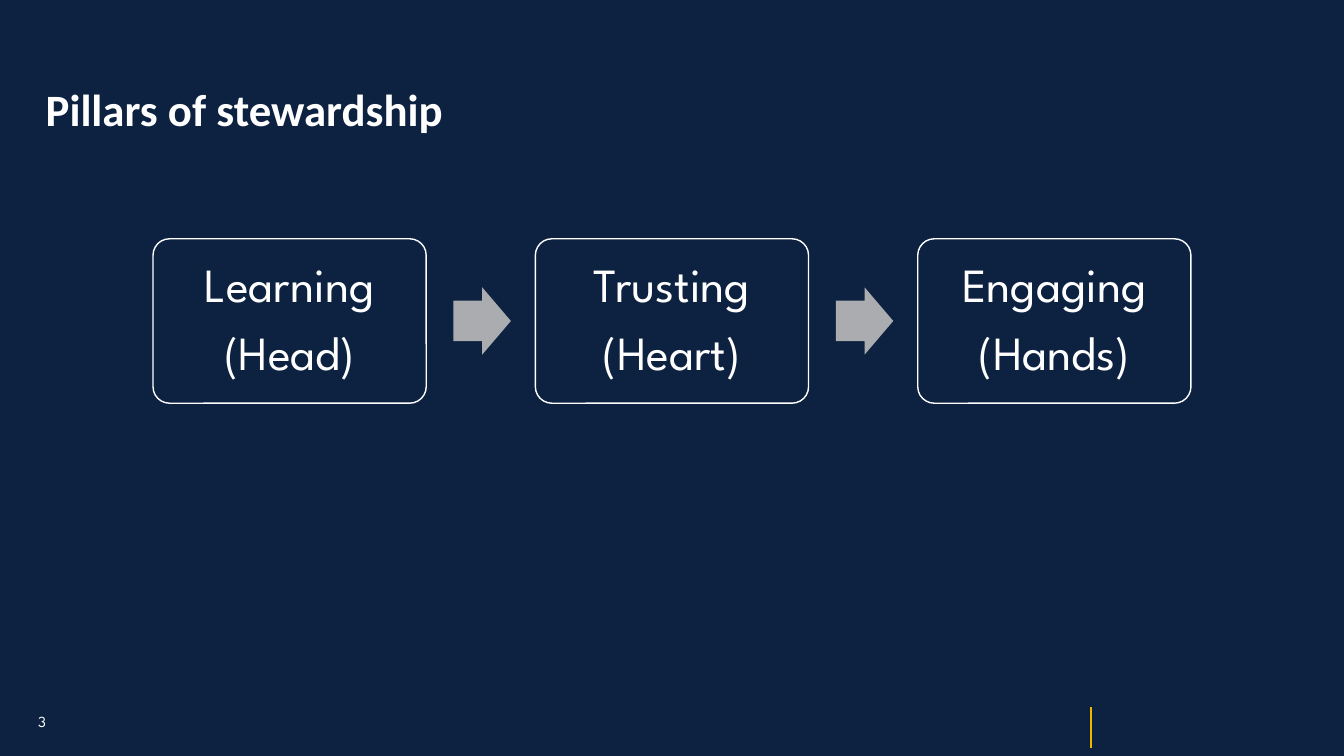
from dataclasses import dataclass

from lxml import etree
from pptx import Presentation
from pptx import util as u
from pptx.dml.color import RGBColor
from pptx.enum import shapes, text
from pptx.oxml.ns import qn

WIDTH, HEIGHT = u.Inches(13.33), u.Inches(7.5)
COLUMNS, ROWS = 40, 24
NAVY, CARD_NAVY, WHITE, GREY, GOLD = "0D2240", "0D2140", "FFFFFF", "ABACB0", "EBB800"
BRAND_FONT, TITLE_FONT = "League Spartan", "Calibri"
PILLAR_PITCH, PILLAR_MIDDLE = 11.38, 10.19
CARD_WIDTH, CARD_HEIGHT = 8.13, 5.22
ARROW_WIDTH, ARROW_HEIGHT, ARROW_OFFSET = 1.71, 2.14, 5.73


@dataclass(frozen=True)
class Area:
    """A rectangle in grid columns and rows."""

    column: float
    row: float
    columns: float
    rows: float

    def lengths(self) -> tuple:
        """Return left, top, width and height on the slide."""
        return x(self.column), y(self.row), x(self.columns), y(self.rows)


@dataclass(frozen=True)
class Pillar:
    """A pillar of stewardship and the body part it stands for."""

    action: str
    body_part: str


PILLARS = [
    Pillar("Learning", "(Head)"),
    Pillar("Trusting", "(Heart)"),
    Pillar("Engaging", "(Hands)"),
]


def x(columns: float) -> int:
    """Convert grid columns to a length."""
    return round(WIDTH * columns / COLUMNS)


def y(rows: float) -> int:
    """Convert grid rows to a length."""
    return round(HEIGHT * rows / ROWS)


def paint(target, colour: str) -> None:
    """Give a fill a solid colour."""
    target.solid()
    target.fore_color.rgb = RGBColor.from_string(colour)


def centred(middle_column: float, columns: float, rows: float) -> Area:
    """Return an area centred on the row of pillars."""
    return Area(middle_column - columns / 2, PILLAR_MIDDLE - rows / 2, columns, rows)


def write(frame, lines: list, font: dict, paragraph_format: dict) -> None:
    """Write white, vertically centred lines in a text frame."""
    frame.word_wrap = True
    frame.vertical_anchor = text.MSO_ANCHOR.MIDDLE
    for index, line in enumerate(lines):
        paragraph = frame.add_paragraph() if index else frame.paragraphs[0]
        for key, value in paragraph_format.items():
            setattr(paragraph, key, value)
        run = paragraph.add_run()
        run.text = line
        for key, value in font.items():
            setattr(run.font, key, value)
        paint(run.font.fill, WHITE)


def add_label(slide, area: Area, words: str, font: dict, paragraph_format: dict) -> None:
    """Add one line of free text."""
    label = slide.shapes.add_textbox(*area.lengths())
    write(label.text_frame, [words], font, paragraph_format)


def add_block(slide, kind, area: Area, colour: str, adjustments: list):
    """Add a filled preset shape without outline or shadow."""
    block = slide.shapes.add_shape(kind, *area.lengths())
    block.shadow.inherit = False
    paint(block.fill, colour)
    block.line.fill.background()
    for index, value in enumerate(adjustments):
        block.adjustments[index] = value
    return block


def add_pillar(slide, pillar: Pillar, middle: float) -> None:
    """Add the outlined card of a pillar."""
    area = centred(middle, CARD_WIDTH, CARD_HEIGHT)
    card = add_block(slide, shapes.MSO_SHAPE.ROUNDED_RECTANGLE, area, CARD_NAVY, [0.1])
    paint(card.line.fill, WHITE)
    card.line.width = u.Pt(1)
    for side in ("left", "top", "right", "bottom"):
        setattr(card.text_frame, f"margin_{side}", u.Inches(0.14))
    write(
        card.text_frame,
        [pillar.action, pillar.body_part],
        {"name": BRAND_FONT, "size": u.Pt(34)},
        {"alignment": text.PP_ALIGN.CENTER, "line_spacing": 0.9, "space_after": u.Pt(12)},
    )


def add_footer(slide) -> None:
    """Add the page number and the gold divider."""
    add_label(slide, Area(0.84, 22.27, 3.78, 1.28), "3",
              {"name": BRAND_FONT, "size": u.Pt(11)}, {})
    divider = slide.shapes.add_connector(
        shapes.MSO_CONNECTOR.STRAIGHT, x(32.47), y(22.46), x(32.47), y(23.74))
    paint(divider.line.fill, GOLD)
    divider.line.width = u.Pt(1.75)
    etree.SubElement(divider._element.spPr, qn("a:effectLst"))


def main() -> None:
    """Build the slide and save it."""
    deck = Presentation()
    deck.slide_width, deck.slide_height = WIDTH, HEIGHT
    slide = deck.slides.add_slide(deck.slide_layouts[6])
    paint(slide.background.fill, NAVY)
    add_footer(slide)
    for index, pillar in enumerate(PILLARS):
        middle = COLUMNS / 2 + (index - (len(PILLARS) - 1) / 2) * PILLAR_PITCH
        add_pillar(slide, pillar, middle)
        if index < len(PILLARS) - 1:
            area = centred(middle + ARROW_OFFSET, ARROW_WIDTH, ARROW_HEIGHT)
            add_block(slide, shapes.MSO_SHAPE.RIGHT_ARROW, area, GREY, [0.6, 0.5])
    add_label(slide, Area(0, 0, 14.55, 7.14), "Pillars of stewardship",
              {"name": TITLE_FONT, "size": u.Pt(32), "bold": True},
              {"alignment": text.PP_ALIGN.CENTER, "line_spacing": 0.9})
    deck.save("out.pptx")


if __name__ == "__main__":
    main()
